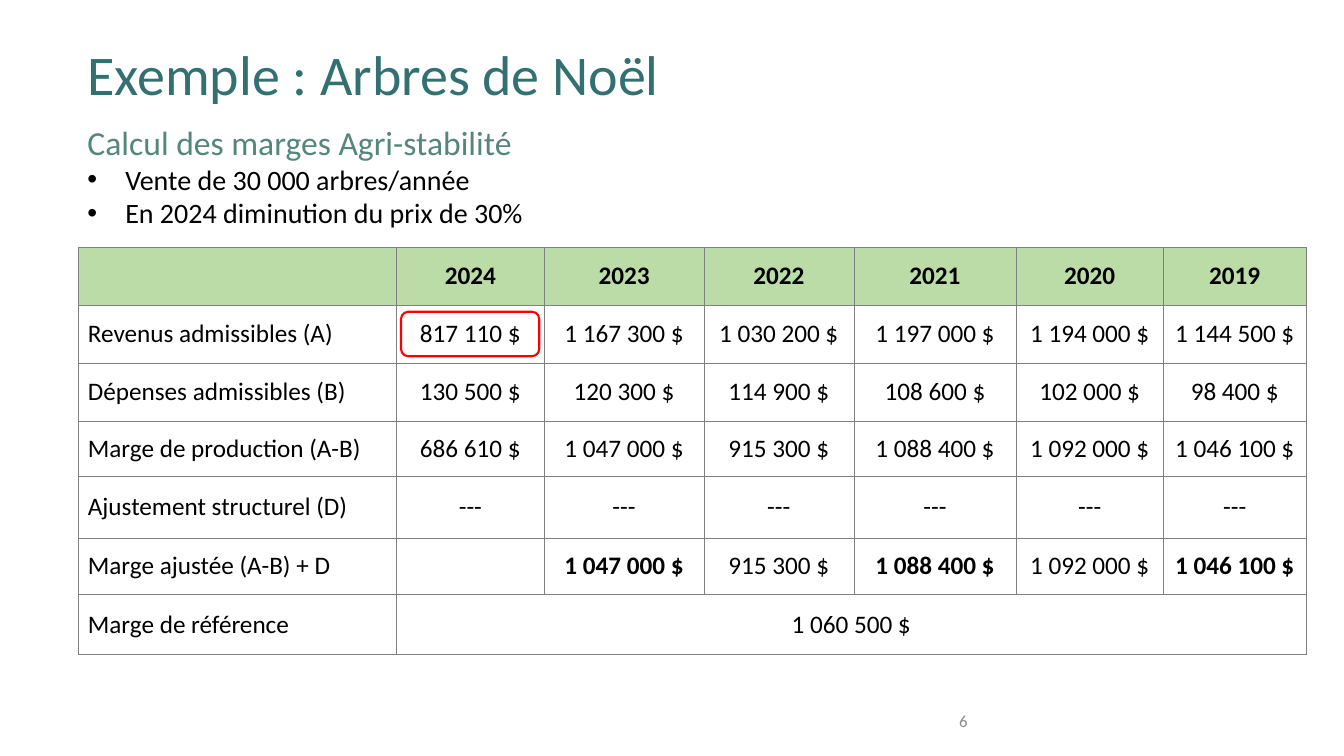
from dataclasses import dataclass

from lxml.etree import SubElement
from pptx import Presentation
from pptx.dml.color import RGBColor
from pptx.enum.shapes import MSO_SHAPE as Preset
from pptx.enum.text import MSO_ANCHOR as Anchor, PP_ALIGN as Align
from pptx.oxml import parse_xml
from pptx.oxml.ns import nsdecls, qn
from pptx.util import Pt

COLORS = {
    "title": "327072",
    "subtitle": "55867D",
    "text": "000000",
    "number": "8C8C8C",
    "header": "BBDCA7",
    "body": "FFFFFF",
    "border": "808080",
    "highlight": "FF0000",
}
FONT = "Calibri"
COLUMN_WIDTHS = (227.5, 105.8, 113.8, 107.3, 115.9, 105.1, 102.2)


@dataclass(frozen=True)
class MarginRow:
    label: str
    values: tuple[str, ...]
    height: float
    fill: str = "body"
    bold_columns: tuple[int, ...] = ()


ROWS = (
    MarginRow("", ("2024", "2023", "2022", "2021", "2020", "2019"), 41.3,
              fill="header", bold_columns=(1, 2, 3, 4, 5, 6)),
    MarginRow("Revenus admissibles (A)",
              ("817 110 $", "1 167 300 $", "1 030 200 $",
               "1 197 000 $", "1 194 000 $", "1 144 500 $"), 41.4),
    MarginRow("Dépenses admissibles (B)",
              ("130 500 $", "120 300 $", "114 900 $",
               "108 600 $", "102 000 $", "98 400 $"), 41.4),
    MarginRow("Marge de production (A-B)",
              ("686 610 $", "1 047 000 $", "915 300 $",
               "1 088 400 $", "1 092 000 $", "1 046 100 $"), 39.5),
    MarginRow("Ajustement structurel (D)", ("---",) * 6, 44.1),
    MarginRow("Marge ajustée (A-B) + D",
              ("", "1 047 000 $", "915 300 $",
               "1 088 400 $", "1 092 000 $", "1 046 100 $"), 40.2,
              bold_columns=(2, 4, 6)),
    MarginRow("Marge de référence", ("1 060 500 $",), 43),
)


def color(name: str) -> RGBColor:
    return RGBColor.from_string(COLORS[name])


def write_text(paragraph, text: str, *, size: float, color_name: str = "text",
               bold: bool = False, align=Align.LEFT) -> None:
    paragraph.alignment = align
    run = paragraph.add_run()
    run.text = text
    run.font.name = FONT
    run.font.size = Pt(size)
    run.font.bold = bold
    run.font.color.rgb = color(color_name)


def add_text_frame(slide, left: float, top: float, width: float, height: float,
                   anchor=Anchor.TOP):
    frame = slide.shapes.add_textbox(Pt(left), Pt(top), Pt(width), Pt(height)).text_frame
    frame.word_wrap = True
    frame.vertical_anchor = anchor
    return frame


def add_bullet(paragraph, indent: float) -> None:
    properties = paragraph._p.get_or_add_pPr()
    properties.set("marL", str(Pt(indent)))
    properties.set("indent", str(-Pt(indent)))
    SubElement(properties, qn("a:buFont"), typeface="Arial")
    SubElement(properties, qn("a:buChar"), char="•")


def format_cell(cell, fill: str) -> None:
    """Fill the cell, centre it vertically and outline its four sides."""
    cell.vertical_anchor = Anchor.MIDDLE
    cell.fill.solid()
    cell.fill.fore_color.rgb = color(fill)
    properties = cell._tc.get_or_add_tcPr()
    for position, side in enumerate(("lnL", "lnR", "lnT", "lnB")):
        properties.insert(position, parse_xml(
            f'<a:{side} {nsdecls("a")} w="{Pt(0.25)}"><a:solidFill>'
            f'<a:srgbClr val="{COLORS["border"]}"/></a:solidFill></a:{side}>'))


def add_margin_table(slide) -> None:
    table = slide.shapes.add_table(
        len(ROWS), len(COLUMN_WIDTHS), Pt(55.6), Pt(176.7),
        Pt(sum(COLUMN_WIDTHS)), Pt(sum(row.height for row in ROWS))).table
    table.first_row = False
    table.horz_banding = False
    for column, width in zip(table.columns, COLUMN_WIDTHS):
        column.width = Pt(width)
    for row_index, row in enumerate(ROWS):
        table.rows[row_index].height = Pt(row.height)
        for cell in table.rows[row_index].cells:
            format_cell(cell, row.fill)
        for column_index, text in enumerate((row.label, *row.values)):
            if text:
                write_text(table.cell(row_index, column_index).text_frame.paragraphs[0],
                           text, size=18, bold=column_index in row.bold_columns,
                           align=Align.CENTER if column_index else Align.LEFT)
    last_row = len(ROWS) - 1
    table.cell(last_row, 1).merge(table.cell(last_row, len(COLUMN_WIDTHS) - 1))


def add_highlight(slide) -> None:
    shape = slide.shapes.add_shape(Preset.ROUNDED_RECTANGLE,
                                   Pt(286.4), Pt(222.7), Pt(98.8), Pt(31.8))
    shape.shadow.inherit = False
    shape.fill.background()
    shape.line.color.rgb = color("highlight")
    shape.line.width = Pt(1.5)


def main() -> None:
    presentation = Presentation()
    presentation.slide_width = Pt(960)
    presentation.slide_height = Pt(540)
    slide = presentation.slides.add_slide(presentation.slide_layouts[6])

    title = add_text_frame(slide, 55.4, 30.2, 828, 62.6).paragraphs[0]
    title.line_spacing = 0.9
    write_text(title, "Exemple : Arbres de Noël", size=40, color_name="title")

    number = add_text_frame(slide, 678, 500.5, 216, 28.8, Anchor.MIDDLE).paragraphs[0]
    write_text(number, "6", size=12, color_name="number")

    add_margin_table(slide)

    summary = add_text_frame(slide, 55.4, 83.5, 849, 108.7)
    write_text(summary.paragraphs[0], "Calcul des marges Agri-stabilité",
               size=24, color_name="subtitle")
    for text in ("Vente de 30 000 arbres/année", "En 2024 diminution du prix de 30%"):
        paragraph = summary.add_paragraph()
        add_bullet(paragraph, 27)
        write_text(paragraph, text, size=20)

    add_highlight(slide)
    presentation.save("out.pptx")


if __name__ == "__main__":
    main()
